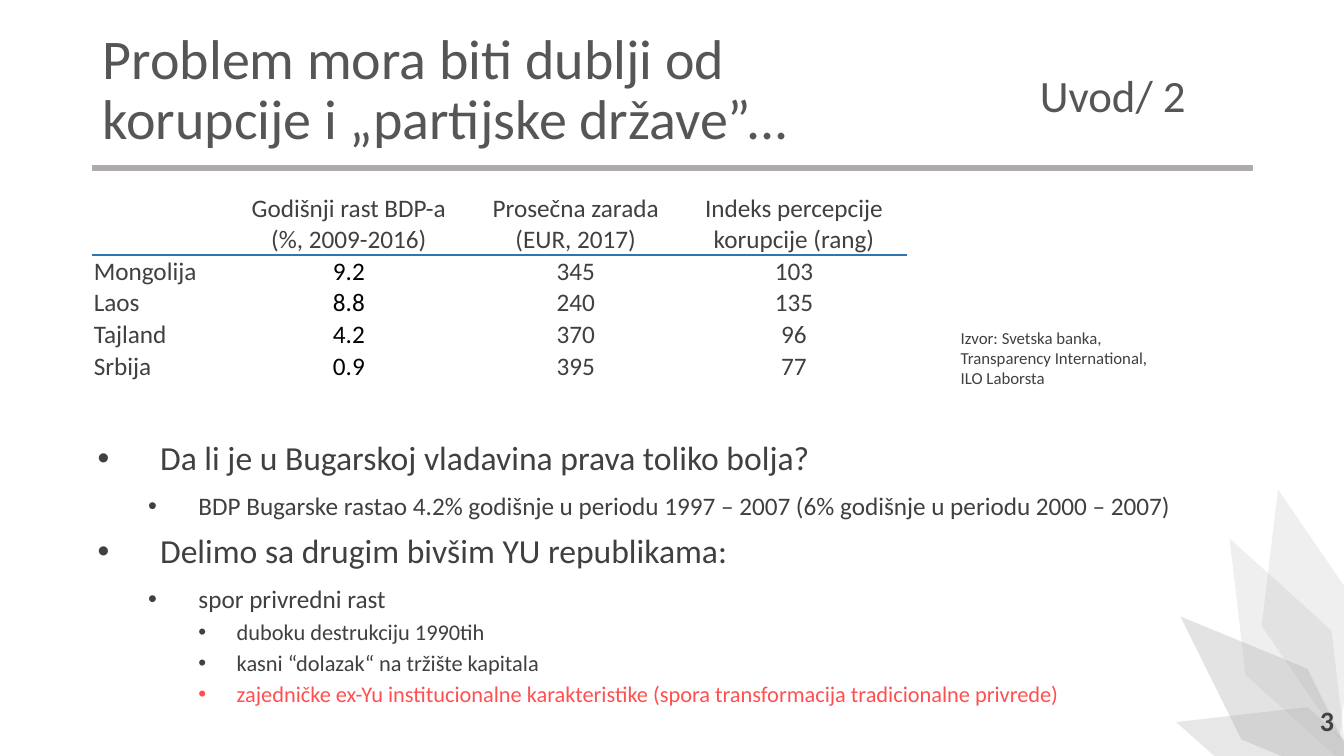
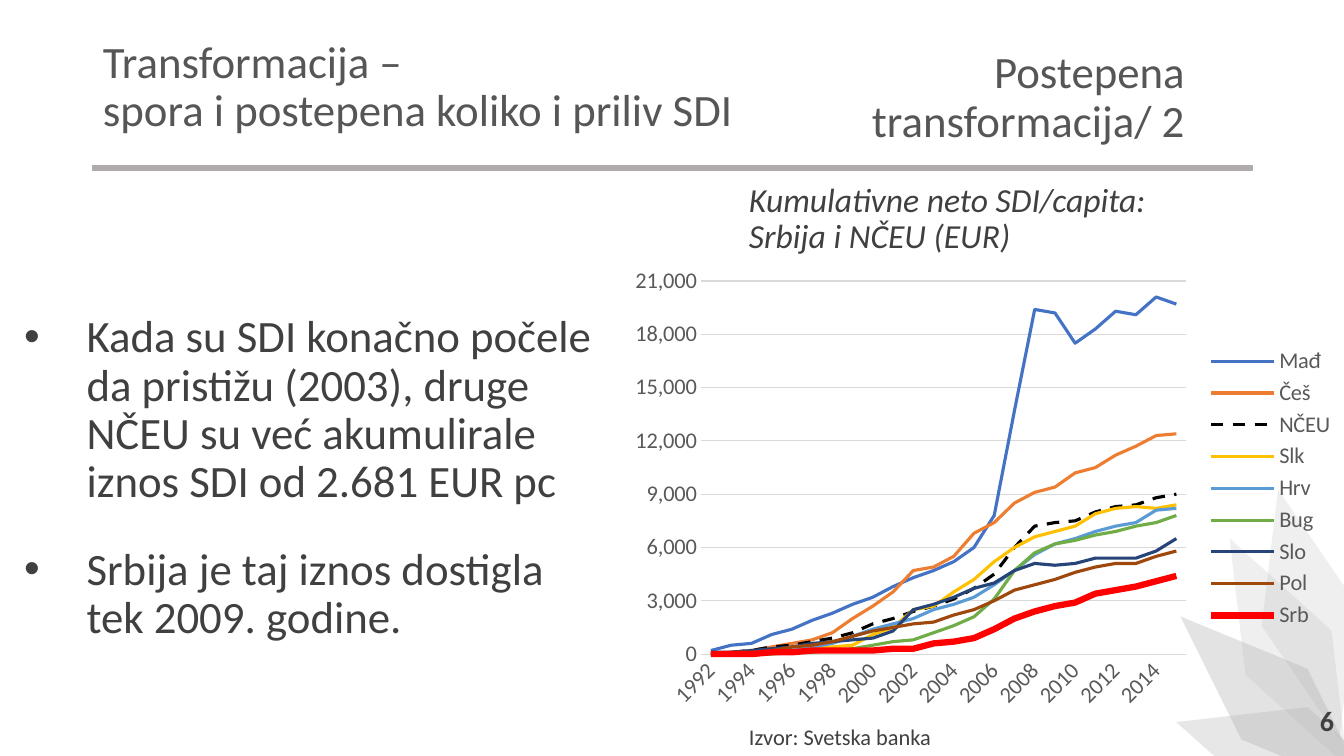
from dataclasses import dataclass
from typing import NamedTuple

from lxml import etree
from pptx import Presentation
from pptx.chart.data import CategoryChartData
from pptx.dml.color import RGBColor
from pptx.enum.chart import XL_CHART_TYPE, XL_LEGEND_POSITION, XL_TICK_MARK
from pptx.enum.dml import MSO_LINE
from pptx.enum.shapes import MSO_SHAPE
from pptx.enum.text import MSO_ANCHOR, MSO_AUTO_SIZE, PP_ALIGN
from pptx.oxml import parse_xml
from pptx.oxml.ns import nsdecls, qn
from pptx.util import Inches, Pt

LEFT, CENTER, RIGHT = PP_ALIGN.LEFT, PP_ALIGN.CENTER, PP_ALIGN.RIGHT
TOP, MIDDLE, BOTTOM = MSO_ANCHOR.TOP, MSO_ANCHOR.MIDDLE, MSO_ANCHOR.BOTTOM
DIAMOND, RECTANGLE = MSO_SHAPE.FLOWCHART_DECISION, MSO_SHAPE.RECTANGLE
NO_TICKS = XL_TICK_MARK.NONE
TITLE_ONLY = 5


@dataclass(frozen=True)
class Theme:
    font: str = "Calibri"
    heading: str = "565656"
    text: str = "404040"
    black: str = "000000"
    accent: str = "FF5050"
    leaf: str = "B0B0B0"
    band: str = "AFABAB"
    table_rule: str = "2E75B6"
    axis_text: str = "595959"
    grid: str = "D9D9D9"
    title_size: int = 40
    section_size: int = 32
    lead_size: int = 24
    number_size: int = 20
    detail_size: int = 18
    small_size: int = 16
    source_size: int = 12
    tight: float = 0.9


THEME = Theme()


class Box(NamedTuple):
    left: float
    top: float
    width: float
    height: float

    def lengths(self) -> list:
        return [Inches(value) for value in self]


class Leaf(NamedTuple):
    box: Box
    rotation: float
    opacity: int


class Style(NamedTuple):
    size: int
    color: str = THEME.text
    bold: bool = False
    italic: bool = False


class Level(NamedTuple):
    indent: float
    hanging: float
    size: int
    before: int
    after: int


class Bullet(NamedTuple):
    text: str
    level: int = 0
    color: str = THEME.text


class Line(NamedTuple):
    name: str
    color: str
    values: list
    width: float = 2.25
    dashed: bool = False


LEAVES = [
    Leaf(Box(12.27, 6.33, 1.07, 2.39), 287.6, 30),
    Leaf(Box(12.3, 5.2, 0.96, 2.55), 332.7, 20),
    Leaf(Box(12.16, 5.71, 0.96, 2.55), 313, 35),
    Leaf(Box(12.5, 4.82, 0.96, 2.55), 346.2, 20),
]
HEADING = Style(THEME.section_size, THEME.heading)
ARGUMENT_LEVELS = [
    Level(0.62, 0.62, THEME.lead_size, 10, 6),
    Level(1, 0.5, THEME.detail_size, 5, 0),
    Level(1.38, 0.38, THEME.small_size, 5, 0),
]
FINDING_LEVELS = [Level(0.62, 0.62, THEME.section_size, 10, 18)]

COLUMN_WIDTHS = [1.34, 2.4, 2.1, 2.23]
HEADER_HEIGHT, ROW_HEIGHT = 0.61, 0.31
COUNTRIES = [
    ["", "Godišnji rast BDP-a\n(%, 2009-2016)", "Prosečna zarada (EUR, 2017)",
     "Indeks percepcije korupcije (rang)"],
    ["Mongolija", "9.2", "345", "103"],
    ["Laos", "8.8", "240", "135"],
    ["Tajland", "4.2", "370", "96"],
    ["Srbija", "0.9", "395", "77"],
]
ARGUMENTS = [
    Bullet("Da li je u Bugarskoj vladavina prava toliko bolja?"),
    Bullet("BDP Bugarske rastao 4.2% godišnje u periodu 1997 – 2007 "
           "(6% godišnje u periodu 2000 – 2007)", 1),
    Bullet("Delimo sa drugim bivšim YU republikama:"),
    Bullet("spor privredni rast", 1),
    Bullet("duboku destrukciju 1990tih", 2),
    Bullet("kasni “dolazak“ na tržište kapitala", 2),
    Bullet("zajedničke ex-Yu institucionalne karakteristike "
           "(spora transformacija tradicionalne privrede)", 2, THEME.accent),
]
FINDINGS = [
    Bullet("Kada su SDI konačno počele da pristižu (2003), druge NČEU su već "
           "akumulirale iznos SDI od 2.681 EUR pc"),
    Bullet("Srbija je taj iznos dostigla tek 2009. godine."),
]
YEARS = [str(year) for year in range(1992, 2016)]
INVESTMENT = [
    Line("Mađ", "4472C4", [200, 500, 600, 1100, 1400, 1900, 2300, 2800, 3200, 3800, 4300, 4700,
                           5200, 6000, 7800, 13700, 19400, 19200, 17500, 18300, 19300, 19100,
                           20100, 19700]),
    Line("Češ", "ED7D31", [0, 100, 200, 400, 600, 800, 1200, 2000, 2700, 3500, 4700, 4900,
                           5500, 6800, 7400, 8500, 9100, 9400, 10200, 10500, 11200, 11700,
                           12300, 12400]),
    Line("NČEU", THEME.black, [0, 100, 200, 400, 500, 700, 900, 1200, 1700, 2000, 2400, 2700,
                               3100, 3700, 4500, 6000, 7200, 7400, 7500, 8000, 8300, 8400,
                               8800, 9000], dashed=True),
    Line("Slk", "FFC000", [0, 0, 100, 200, 200, 300, 400, 500, 1100, 1500, 2500, 2700,
                           3500, 4200, 5200, 6000, 6600, 6900, 7200, 7900, 8200, 8300,
                           8200, 8400]),
    Line("Hrv", "5B9BD5", [0, 0, 100, 100, 200, 400, 600, 1000, 1400, 1700, 2000, 2500,
                           2800, 3200, 3900, 4700, 5600, 6200, 6500, 6900, 7200, 7400,
                           8100, 8200]),
    Line("Bug", "70AD47", [0, 0, 0, 0, 100, 100, 200, 300, 500, 700, 800, 1200,
                           1600, 2100, 3100, 4700, 5700, 6200, 6400, 6700, 6900, 7200,
                           7400, 7800]),
    Line("Slo", "264478", [100, 100, 200, 300, 400, 600, 700, 800, 900, 1300, 2500, 2800,
                           3200, 3700, 4000, 4700, 5100, 5000, 5100, 5400, 5400, 5400,
                           5800, 6500]),
    Line("Pol", "9E480E", [0, 100, 100, 200, 400, 500, 700, 1000, 1300, 1500, 1700, 1800,
                           2200, 2500, 3000, 3600, 3900, 4200, 4600, 4900, 5100, 5100,
                           5500, 5800]),
    Line("Srb", "FF0000", [0, 0, 0, 100, 100, 200, 200, 200, 200, 300, 300, 600,
                           700, 900, 1400, 2000, 2400, 2700, 2900, 3400, 3600, 3800,
                           4100, 4400], width=4.5),
]


def rgb(color: str) -> RGBColor:
    return RGBColor.from_string(color)


def style_font(font, style: Style) -> None:
    font.name, font.size = THEME.font, Pt(style.size)
    font.bold, font.italic = style.bold, style.italic
    font.color.rgb = rgb(style.color)


def write(paragraph, text: str, style: Style, align=LEFT, spacing: float = 1.0) -> None:
    """Fill a paragraph with styled runs, one for each line of the text."""
    paragraph.alignment, paragraph.line_spacing = align, spacing
    for number, line in enumerate(text.split("\n")):
        if number:
            paragraph.add_line_break()
        run = paragraph.add_run()
        run.text = line
        style_font(run.font, style)


def set_frame(frame, anchor) -> None:
    frame.word_wrap, frame.auto_size = True, MSO_AUTO_SIZE.NONE
    frame.vertical_anchor = anchor


def add_text(slide, box: Box, text: str, style: Style, align=LEFT, anchor=TOP,
             spacing: float = 1.0) -> None:
    frame = slide.shapes.add_textbox(*box.lengths()).text_frame
    set_frame(frame, anchor)
    write(frame.paragraphs[0], text, style, align, spacing)


def add_bullets(slide, box: Box, bullets: list[Bullet], levels: list[Level]) -> None:
    frame = slide.shapes.add_textbox(*box.lengths()).text_frame
    set_frame(frame, MIDDLE)
    for number, bullet in enumerate(bullets):
        level = levels[bullet.level]
        paragraph = frame.add_paragraph() if number else frame.paragraphs[0]
        properties = paragraph._p.get_or_add_pPr()
        properties.set("marL", str(Inches(level.indent)))
        properties.set("indent", str(-Inches(level.hanging)))
        etree.SubElement(properties, qn("a:buFont")).set("typeface", "Arial")
        etree.SubElement(properties, qn("a:buChar")).set("char", "•")
        paragraph.level = bullet.level
        if number:
            paragraph.space_before = Pt(level.before)
        paragraph.space_after = Pt(level.after)
        write(paragraph, bullet.text, Style(level.size, bullet.color), spacing=THEME.tight)


def add_plain_shape(slide, kind, box: Box, color: str):
    shape = slide.shapes.add_shape(kind, *box.lengths())
    shape.shadow.inherit = False
    shape.fill.solid()
    shape.fill.fore_color.rgb = rgb(color)
    shape.line.fill.background()
    return shape


def add_leaf(slide, leaf: Leaf) -> None:
    shape = add_plain_shape(slide, DIAMOND, leaf.box, THEME.leaf)
    shape.rotation = leaf.rotation
    color = shape._element.spPr.find(qn("a:solidFill"))[0]
    etree.SubElement(color, qn("a:alpha")).set("val", str(leaf.opacity * 1000))


def add_base_slide(deck, title: str, title_box: Box, title_size: int,
                   section: str, section_box: Box, number: str):
    """Add a slide with the shared leaves, band, headings and page number."""
    slide = deck.slides.add_slide(deck.slide_layouts[TITLE_ONLY])
    for leaf in LEAVES:
        add_leaf(slide, leaf)
    band = add_plain_shape(slide, RECTANGLE, Box(0.92, 1.64, 11.5, 0.05), THEME.band)
    band.line.color.rgb, band.line.width = rgb(THEME.band), Pt(1)

    heading = slide.shapes.title
    heading.left, heading.top, heading.width, heading.height = title_box.lengths()
    set_frame(heading.text_frame, MIDDLE)
    write(heading.text_frame.paragraphs[0], title, Style(title_size, THEME.heading),
          spacing=THEME.tight)
    add_text(slide, section_box, section, HEADING, RIGHT, MIDDLE, THEME.tight)
    add_text(slide, Box(10.33, 6.95, 3, 0.4), number,
             Style(THEME.number_size, bold=True), RIGHT, MIDDLE)
    return slide


def add_cell_rule(cell, side: str) -> None:
    cell._tc.get_or_add_tcPr().insert(0, parse_xml(
        f'<a:{side} {nsdecls("a")} w="{Pt(1)}"><a:solidFill>'
        f'<a:srgbClr val="{THEME.table_rule}"/></a:solidFill></a:{side}>'))


def add_country_table(slide) -> None:
    heights = [HEADER_HEIGHT] + [ROW_HEIGHT] * (len(COUNTRIES) - 1)
    box = Box(0.92, 1.91, sum(COLUMN_WIDTHS), sum(heights))
    table = slide.shapes.add_table(len(heights), len(COLUMN_WIDTHS), *box.lengths()).table
    table.first_row = table.horz_banding = False
    for column, width in zip(table.columns, COLUMN_WIDTHS):
        column.width = Inches(width)
    for r, (height, values) in enumerate(zip(heights, COUNTRIES)):
        table.rows[r].height = Inches(height)
        for c, value in enumerate(values):
            cell = table.cell(r, c)
            cell.fill.background()
            cell.margin_left = cell.margin_right = cell.margin_top = Inches(0.01)
            cell.margin_bottom = 0
            cell.vertical_anchor = BOTTOM if r else MIDDLE
            color = THEME.black if r and c == 1 else THEME.text
            if value:
                write(cell.text_frame.paragraphs[0], value, Style(THEME.detail_size, color),
                      CENTER if c else LEFT)
            if r < 2:
                add_cell_rule(cell, "lnT" if r else "lnB")


def place_plot(chart, area: Box) -> None:
    """Fix the inner plot area, given as fractions of the chart."""
    plot_area = chart._chartSpace.chart.plotArea
    for layout in plot_area.findall(qn("c:layout")):
        plot_area.remove(layout)
    places = "".join(f'<c:{key} val="{value}"/>' for key, value in zip("xywh", area))
    plot_area.insert(0, parse_xml(
        f'<c:layout {nsdecls("c")}><c:manualLayout><c:layoutTarget val="inner"/>'
        f'<c:xMode val="edge"/><c:yMode val="edge"/>{places}</c:manualLayout></c:layout>'))


def add_investment_chart(slide) -> None:
    data = CategoryChartData(number_format="#,##0")
    data.categories = YEARS
    for line in INVESTMENT:
        data.add_series(line.name, line.values)
    chart = slide.shapes.add_chart(
        XL_CHART_TYPE.LINE, *Box(6.16, 2.56, 7.19, 4.57).lengths(), data).chart
    label = Style(THEME.small_size, THEME.axis_text)
    style_font(chart.font, label)
    chart.has_title, chart.has_legend = False, True
    chart.legend.position = XL_LEGEND_POSITION.RIGHT
    chart.legend.include_in_layout = False
    style_font(chart.legend.font, label)
    chart.plots[0].vary_by_categories = False
    place_plot(chart, Box(0.11, 0.05, 0.67, 0.81))

    years, amounts = chart.category_axis, chart.value_axis
    for axis in (years, amounts):
        axis.major_tick_mark = axis.minor_tick_mark = NO_TICKS
        style_font(axis.tick_labels.font, label)
    years.format.line.color.rgb, years.format.line.width = rgb(THEME.grid), Pt(0.75)
    years._element.find(qn("c:txPr")).find(qn("a:bodyPr")).set("rot", "-2700000")
    years._element.find(qn("c:noMultiLvlLbl")).addprevious(
        parse_xml(f'<c:tickLblSkip {nsdecls("c")} val="2"/>'))
    amounts.minimum_scale, amounts.maximum_scale, amounts.major_unit = 0, 21000, 3000
    amounts.format.line.fill.background()
    amounts.tick_labels.number_format = "#,##0"
    amounts.tick_labels.number_format_is_linked = False
    grid = amounts.major_gridlines.format.line
    grid.color.rgb, grid.width = rgb(THEME.grid), Pt(0.75)

    for series, line in zip(chart.plots[0].series, INVESTMENT):
        series.smooth = False
        stroke = series.format.line
        stroke.color.rgb, stroke.width = rgb(line.color), Pt(line.width)
        if line.dashed:
            stroke.dash_style = MSO_LINE.DASH


def build_problem_slide(deck) -> None:
    slide = add_base_slide(
        deck, "Problem mora biti dublji od korupcije i „partijske države”...",
        Box(0.92, 0.18, 8.25, 1.45), THEME.title_size, "Uvod/ 2",
        Box(9.91, 0.25, 1.95, 1.45), "3")
    add_country_table(slide)
    add_bullets(slide, Box(0.87, 3.9, 11.6, 3.6), ARGUMENTS, ARGUMENT_LEVELS)
    add_text(slide, Box(9.43, 3.2, 2.9, 0.71),
             "Izvor: Svetska banka,\nTransparency International,\nILO Laborsta",
             Style(THEME.source_size))


def build_transformation_slide(deck) -> None:
    slide = add_base_slide(
        deck, "Transformacija –\nspora i postepena koliko i priliv SDI",
        Box(0.92, 0.15, 6.62, 1.45), THEME.section_size, "Postepena transformacija/ 2",
        Box(8.36, 0.25, 3.49, 1.45), "6")
    add_text(slide, Box(7.33, 1.77, 4.75, 0.79),
             "Kumulativne neto SDI/capita: Srbija i NČEU (EUR)",
             Style(THEME.lead_size, italic=True), spacing=THEME.tight)
    add_text(slide, Box(7.33, 7.13, 5.77, 0.37), "Izvor: Svetska banka",
             Style(THEME.small_size))
    add_bullets(slide, Box(0.14, 2, 6.02, 5.5), FINDINGS, FINDING_LEVELS)
    add_investment_chart(slide)


def main() -> None:
    deck = Presentation()
    deck.slide_width, deck.slide_height = Inches(13.33), Inches(7.5)
    build_problem_slide(deck)
    build_transformation_slide(deck)
    deck.save("out.pptx")


if __name__ == "__main__":
    main()
